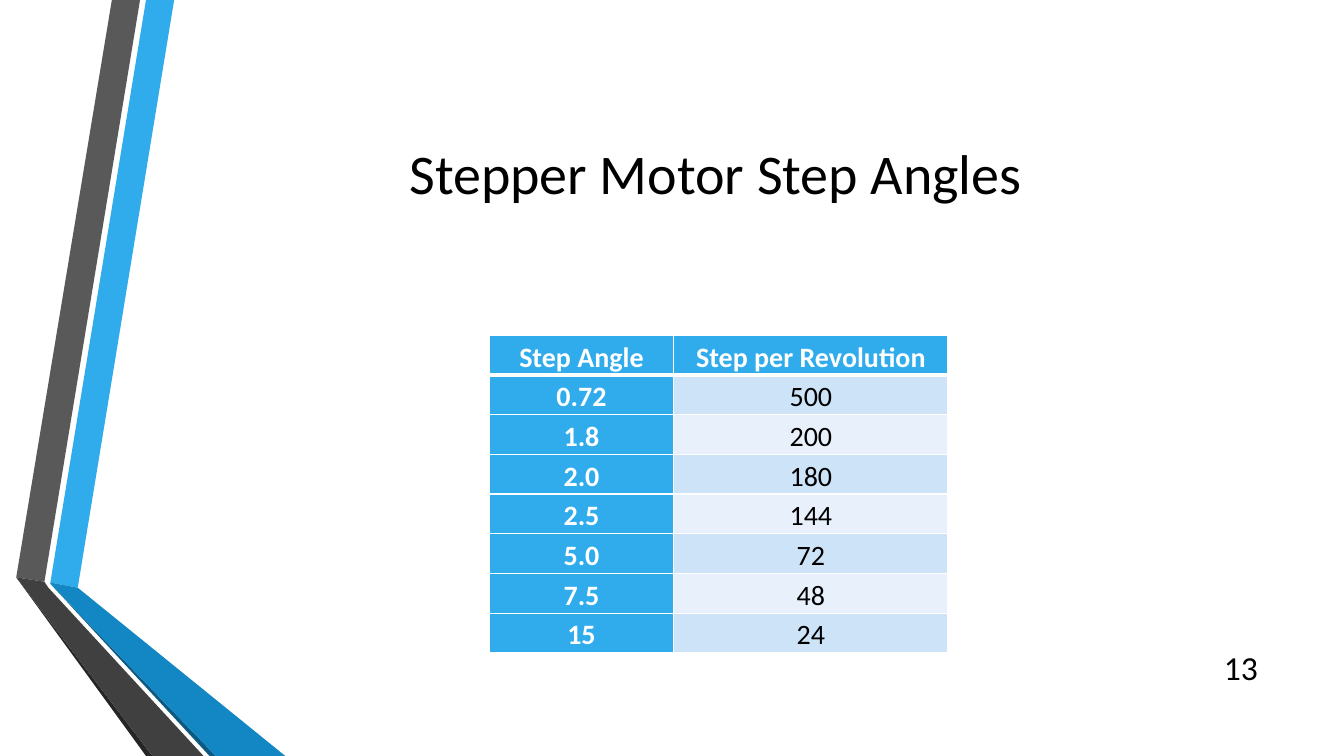
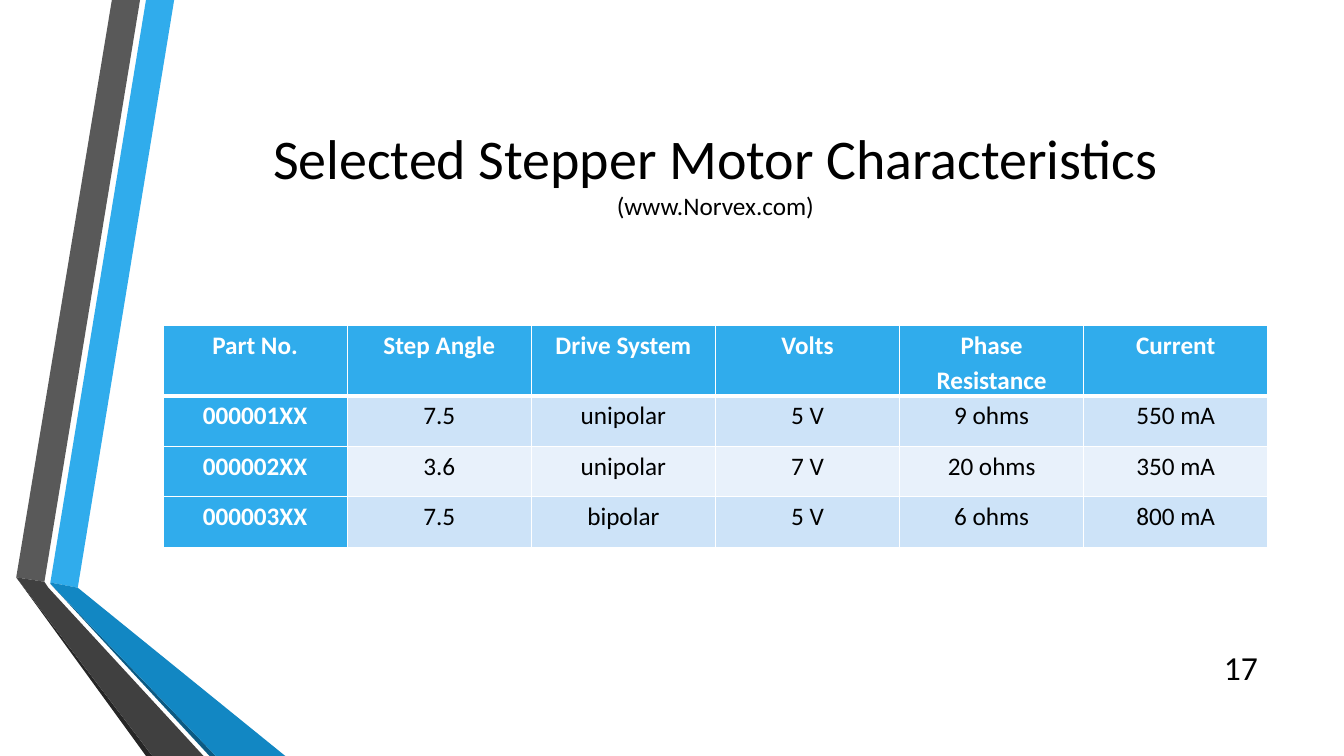
import dataclasses

import pptx
import pptx.dml.color
import pptx.enum.text
import pptx.oxml
import pptx.oxml.ns
import pptx.util

Cm = pptx.util.Cm
Pt = pptx.util.Pt
ALIGN = pptx.enum.text.PP_ALIGN
MIDDLE = pptx.enum.text.MSO_ANCHOR.MIDDLE


@dataclasses.dataclass(frozen=True)
class Theme:
    font: str = "Calibri"
    text: str = "000000"
    light: str = "FFFFFF"
    blue: str = "30ACEC"
    deep: str = "1287C3"
    navy: str = "0C5A82"
    gray: str = "595959"
    dark: str = "404040"
    black: str = "262626"
    bands: tuple = ("CDE3F8", "E8F1FB")
    title: int = 40
    note: int = 18
    number: int = 24


THEME = Theme()
WIDE, HIGH = 33.87, 19.05
LEFT, SPAN = 4.11, 27.84

RIBBONS = (
    (THEME.blue, ((1.27, 14.68), (1.96, 14.81), (4.39, 0), (3.68, 0))),
    (THEME.gray, ((3.53, 0), (2.82, 0), (0.41, 14.55), (1.12, 14.66))),
    (THEME.black, ((0.41, 14.55), (3.68, HIGH), (3.84, HIGH))),
    (THEME.navy, ((1.27, 14.71), (5.28, HIGH), (5.44, HIGH))),
    (THEME.deep, ((1.27, 14.68), (1.27, 14.71), (5.44, HIGH),
                  (7.19, HIGH), (1.96, 14.81))),
    (THEME.dark, ((5.13, HIGH), (1.22, 14.81), (1.12, 14.66),
                  (0.41, 14.55), (3.84, HIGH))),
)

ANGLES = (
    ("Step Angle", "Step per Revolution"),
    ("0.72", "500"),
    ("1.8", "200"),
    ("2.0", "180"),
    ("2.5", "144"),
    ("5.0", "72"),
    ("7.5", "48"),
    ("15", "24"),
)

MOTORS = (
    ("Part No.", "Step Angle", "Drive System", "Volts",
     "Phase Resistance", "Current"),
    ("000001XX", "7.5", "unipolar", "5 V", "9 ohms", "550 mA"),
    ("000002XX", "3.6", "unipolar", "7 V", "20 ohms", "350 mA"),
    ("000003XX", "7.5", "bipolar", "5 V", "6 ohms", "800 mA"),
)


def rgb(code):
    return pptx.dml.color.RGBColor.from_string(code)


def style(para, size, color=THEME.text, bold=False, align=ALIGN.CENTER):
    para.alignment = align
    font = para.font
    font.name, font.size, font.bold = THEME.font, Pt(size), bold
    font.color.rgb = rgb(color)


def paint(shape, color):
    shape.fill.solid()
    shape.fill.fore_color.rgb = rgb(color)


def add_ribbons(slide):
    for color, points in RIBBONS:
        start, *rest = [(Cm(x), Cm(y)) for x, y in points]
        pen = slide.shapes.build_freeform(*start)
        pen.add_line_segments(rest)
        shape = pen.convert_to_shape()
        paint(shape, color)
        shape.line.fill.background()
        shape.shadow.inherit = False


def set_title(slide, text, note):
    title = slide.shapes.title
    title.left, title.top = Cm(LEFT), Cm(1.9)
    title.width, title.height = Cm(SPAN), Cm(4.88)
    frame = title.text_frame
    frame.auto_size = pptx.enum.text.MSO_AUTO_SIZE.NONE
    frame.vertical_anchor = MIDDLE
    para = frame.paragraphs[0]
    style(para, THEME.title)
    para.line_spacing = 1.0
    para.add_run().text = text
    if note:
        para.add_line_break()
        run = para.add_run()
        run.text = note
        run.font.size = Pt(THEME.note)


def add_number(slide, number):
    box = slide.shapes.add_textbox(Cm(30.43), Cm(16.31), Cm(1.52), Cm(1.02))
    frame = box.text_frame
    frame.word_wrap = True
    frame.vertical_anchor = MIDDLE
    para = frame.paragraphs[0]
    para.text = str(number)
    style(para, THEME.number, align=ALIGN.RIGHT)


def add_slide(deck, number, title, note=""):
    slide = deck.slides.add_slide(deck.slide_layouts[5])
    add_ribbons(slide)
    set_title(slide, title, note)
    add_number(slide, number)
    return slide


def add_rules(cell, row):
    """Draw the cell's borders, with a thick rule under the header row."""
    widths = {"L": 1, "R": 1, "T": 3 if row == 1 else 1,
              "B": 3 if row == 0 else 1}
    props = cell._tc.get_or_add_tcPr()
    space = pptx.oxml.ns.nsdecls("a")
    for place, (side, width) in enumerate(widths.items()):
        props.insert(place, pptx.oxml.parse_xml(
            f'<a:ln{side} {space} w="{Pt(width)}"><a:solidFill>'
            f'<a:srgbClr val="{THEME.light}"/></a:solidFill></a:ln{side}>'))


def fill_cell(cell, text, row, col, size, inset):
    head = row == 0 or col == 0
    cell.margin_left = cell.margin_right = Cm(inset)
    cell.margin_top = cell.margin_bottom = 0
    paint(cell, THEME.blue if head else THEME.bands[(row - 1) % 2])
    add_rules(cell, row)
    para = cell.text_frame.paragraphs[0]
    para.text = text
    para.line_spacing = 1.15
    style(para, size, THEME.light if head else THEME.text, head)


def add_grid(slide, data, left, top, widths, heights, size, inset):
    table = slide.shapes.add_table(
        len(data), len(widths), Cm(left), Cm(top),
        Cm(sum(widths)), Cm(sum(heights))).table
    table.horz_banding = False
    for col, width in zip(table.columns, widths):
        col.width = Cm(width)
    for row, height in zip(table.rows, heights):
        row.height = Cm(height)
    for row, line in enumerate(data):
        for col, text in enumerate(line):
            fill_cell(table.cell(row, col), text, row, col, size, inset)


def main():
    deck = pptx.Presentation()
    deck.slide_width, deck.slide_height = Cm(WIDE), Cm(HIGH)

    slide = add_slide(deck, 13, "Stepper Motor Step Angles")
    add_grid(slide, ANGLES, 12.33, 8.45, [4.65, 6.91],
             [1] * len(ANGLES), size=20, inset=0.36)

    slide = add_slide(deck, 17, "Selected Stepper Motor Characteristics",
                      "(www.Norvex.com)")
    add_grid(slide, MOTORS, LEFT, 8.2, [SPAN / 6] * 6,
             [1.78] + [1.27] * 3, size=18, inset=0.3)

    deck.save("out.pptx")


if __name__ == "__main__":
    main()
